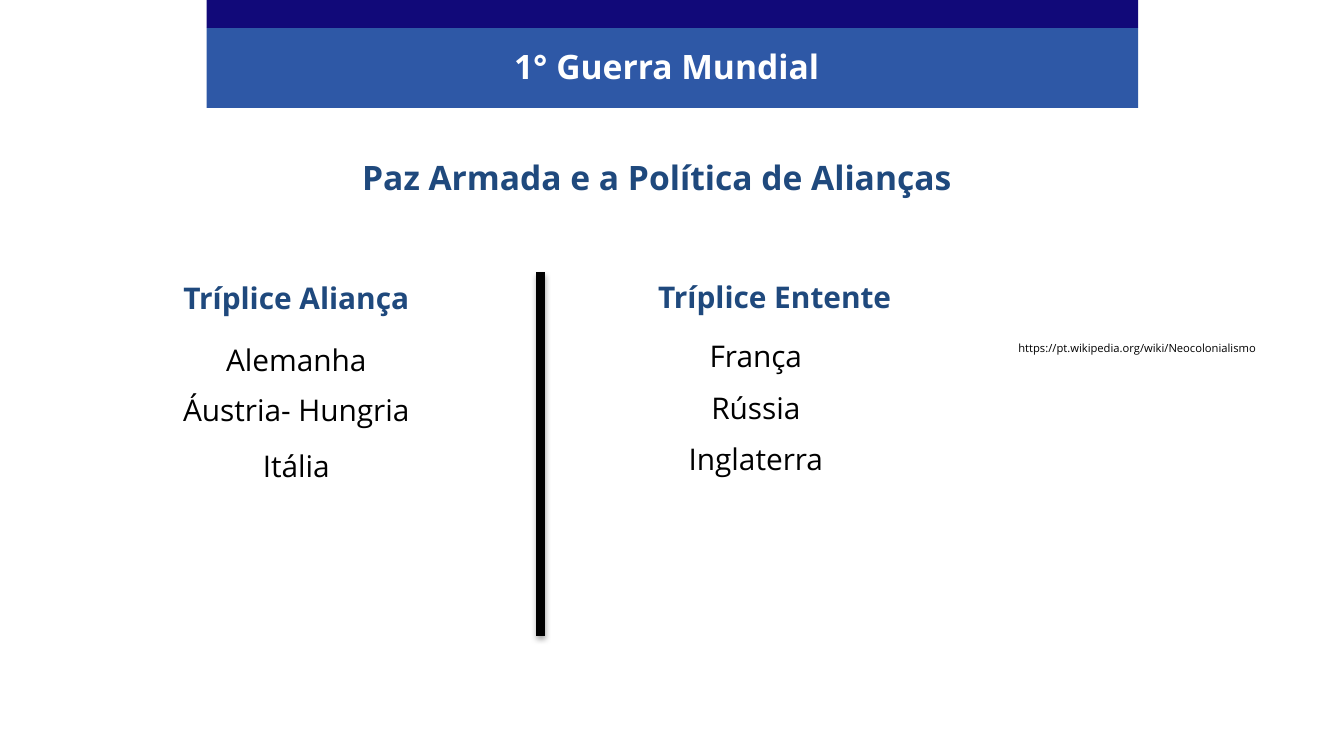
from lxml import etree
from pptx import Presentation
from pptx.dml.color import RGBColor
from pptx.enum.shapes import MSO_CONNECTOR, MSO_SHAPE
from pptx.enum.text import MSO_ANCHOR as Anchor, MSO_AUTO_SIZE as AutoSize, PP_ALIGN as Align
from pptx.oxml.ns import qn
from pptx.util import Pt

FONT = "Open Sans"
BLACK, WHITE, NAVY = "000000", "FFFFFF", "1F497D"


def color(value):
    """Turn a hex string into a colour."""
    return RGBColor.from_string(value)


def place(shape, box):
    """Move a shape to a box of left, top, width and height."""
    shape.left, shape.top, shape.width, shape.height = map(Pt, box)


def write(shape, lines, size, ink, bold=False, align=Align.CENTER, gaps=(0,)):
    """Fill a shape with plain paragraphs, each with its gap before."""
    frame = shape.text_frame
    frame.word_wrap = True
    frame.auto_size = AutoSize.NONE
    frame.vertical_anchor = Anchor.TOP
    for index, (line, gap) in enumerate(zip(lines, gaps)):
        para = frame.add_paragraph() if index else frame.paragraphs[0]
        properties = para._p.get_or_add_pPr()
        properties.set("marL", "0")
        properties.set("indent", "0")
        etree.SubElement(properties, qn("a:buNone"))
        para.alignment = align
        para.space_before = Pt(gap)
        span = para.add_run()
        span.text = line
        span.font.name = FONT
        span.font.size = Pt(size)
        span.font.bold = bold
        span.font.color.rgb = color(ink)


def add_header(page, box):
    """Draw the two-tone band with the slide title on it."""
    left, top, width, height = box
    strip = 15
    title = page.shapes.title
    bands = (("2E58A6", top + strip, height - strip), ("110979", top, strip))
    for fill, band_top, band_height in bands:
        band = page.shapes.add_shape(MSO_SHAPE.RECTANGLE, 0, 0, 0, 0)
        place(band, (left, band_top, width, band_height))
        band.shadow.inherit = False
        band.fill.solid()
        band.fill.fore_color.rgb = color(fill)
        band.line.fill.background()
        title.element.addprevious(band.element)
    place(title, (left - 3, top + 21, width, 29))
    write(title, ["1° Guerra Mundial"], 18, WHITE, bold=True)


def add_label(page, box, text, size, ink, bold=False, align=Align.CENTER):
    """Add a one-line text box."""
    label = page.shapes.add_textbox(*map(Pt, box))
    write(label, [text], size, ink, bold, align)


def add_alliance(heading, members, box, list_left, list_top, name, countries, gaps):
    """Fill a heading placeholder and the list of countries below it."""
    left, top, width, height = box
    place(heading, (left, top, width, 27))
    write(heading, [name], 16, NAVY, bold=True)
    place(members, (list_left, list_top, width, top + height - list_top))
    write(members, countries, 16, BLACK, gaps=gaps)


def add_divider(page, box):
    """Draw the thick vertical line with its soft shadow."""
    left, top, width, height = box
    divider = page.shapes.add_connector(
        MSO_CONNECTOR.STRAIGHT, Pt(left), Pt(top), Pt(left), Pt(top + height))
    divider.line.color.rgb = color(BLACK)
    divider.line.width = Pt(width)
    effects = etree.SubElement(divider.element.spPr, qn("a:effectLst"))
    shadow = etree.SubElement(
        effects, qn("a:outerShdw"), blurRad=str(Pt(3.1)), dist=str(Pt(1.8)),
        dir="5400000", rotWithShape="0")
    shade = etree.SubElement(shadow, qn("a:srgbClr"), val=BLACK)
    etree.SubElement(shade, qn("a:alpha"), val="35000")


def main():
    """Build and save the deck."""
    deck = Presentation()
    deck.slide_width, deck.slide_height = Pt(720), Pt(405)
    page = deck.slides.add_slide(deck.slide_layouts[4])
    slots = page.placeholders
    add_header(page, (110.7, 0, 499, 57.8))
    add_label(page, (123, 80.6, 458, 29), "Paz Armada e a Política de Alianças",
              18, NAVY, bold=True)
    add_alliance(slots[1], slots[2], (78.5, 146, 160.5, 122), 78.5, 179.3,
                 "Tríplice Aliança", ["Alemanha", "Áustria- Hungria", "Itália"],
                 (0, 8, 10.5))
    add_alliance(slots[3], slots[4], (334.8, 145.5, 160.5, 122), 324.7, 177.2,
                 "Tríplice Entente", ["França", "Rússia", "Inglaterra"],
                 (0, 8.5, 8.5))
    add_label(page, (538.5, 179.3, 143.5, 14.5),
              "https://pt.wikipedia.org/wiki/Neocolonialismo", 6, BLACK,
              align=Align.LEFT)
    add_divider(page, (289.6, 146, 4.5, 194.5))
    deck.save("out.pptx")


if __name__ == "__main__":
    main()
